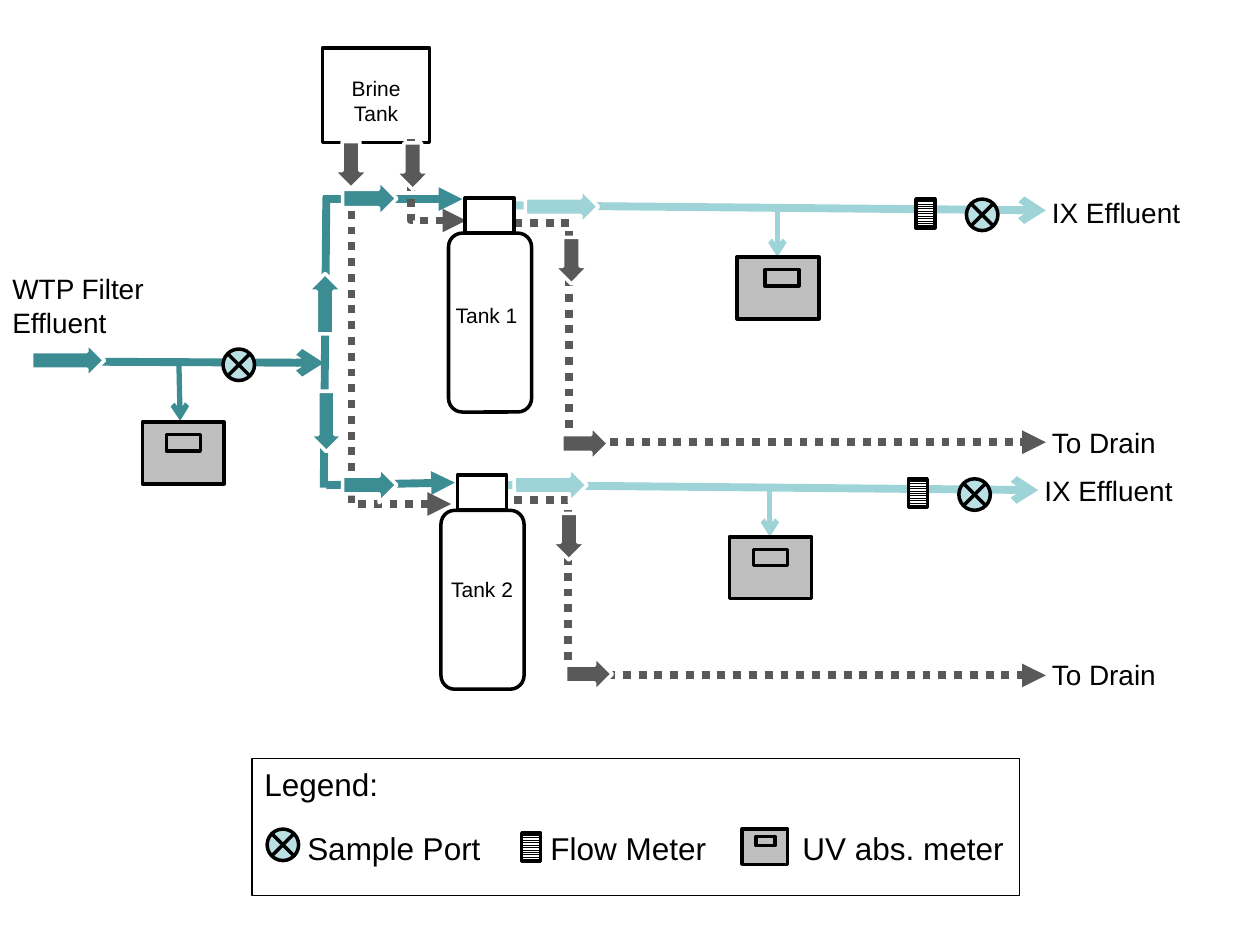
from dataclasses import dataclass
from typing import Optional

from lxml.etree import SubElement
from pptx import Presentation
from pptx.dml.color import RGBColor
from pptx.enum.dml import MSO_LINE, MSO_PATTERN
from pptx.enum.shapes import MSO_CONNECTOR as Link, MSO_SHAPE as Form
from pptx.enum.text import MSO_ANCHOR as Anchor, PP_ALIGN as Align
from pptx.oxml.ns import qn
from pptx.util import Inches, Pt

BLACK = RGBColor(0x00, 0x00, 0x00)
WHITE = RGBColor(0xFF, 0xFF, 0xFF)
TEAL = RGBColor(0x3C, 0x8C, 0x93)
PALE = RGBColor(0x9E, 0xD3, 0xD7)
MINT = RGBColor(0xBB, 0xE0, 0xE3)
DARK = RGBColor(0x59, 0x59, 0x59)
GRAY = RGBColor(0xBF, 0xBF, 0xBF)


@dataclass
class Pipe:
    start: tuple
    end: tuple
    color: RGBColor
    tip: Optional[str] = None
    width: float = 4.5


@dataclass
class Bend:
    box: tuple  # left, top, width, height
    turn: Optional[float] = None  # share of the width; None is a single corner


@dataclass
class Block:
    box: tuple
    color: RGBColor
    angle: int = 0


PIPES = [
    Pipe((2.59, 1.56), (2.57, 3.87), TEAL),
    Pipe((2.56, 1.58), (3.67, 1.58), TEAL, "triangle"),
    Pipe((2.59, 3.85), (3.61, 3.83), TEAL, "triangle"),
    Pipe((0.5, 2.87), (2.57, 2.88), TEAL, "arrow"),
    Pipe((1.42, 2.87), (1.43, 3.34), TEAL, "arrow", 3),
    Pipe((4.08, 1.63), (8.3, 1.67), PALE, "arrow"),
    Pipe((6.17, 1.67), (6.17, 2.04), PALE, "arrow", 3),
    Pipe((4.03, 3.85), (8.24, 3.89), PALE, "arrow"),
    Pipe((6.11, 3.88), (6.11, 4.26), PALE, "arrow", 3),
]
BENDS = [
    Bend((4.08, 1.77, 4.22, 1.74), 0.104),
    Bend((4.08, 3.97, 4.22, 1.39), 0.101),
    Bend((3.26, 1.1, 0.44, 0.65)),
    Bend((2.79, 1.21, 0.79, 2.79)),
]
BLOCKS = [
    Block((2.34, 2.27, 0.48, 0.28), TEAL, 270),
    Block((2.35, 3.21, 0.48, 0.27), TEAL, 90),
    Block((2.72, 1.43, 0.43, 0.29), TEAL),
    Block((2.72, 3.71, 0.43, 0.28), TEAL),
    Block((2.6, 1.17, 0.37, 0.28), DARK, 90),
    Block((3.09, 1.18, 0.37, 0.28), DARK, 90),
    Block((4.33, 4.12, 0.37, 0.28), DARK, 90),
    Block((4.35, 1.93, 0.37, 0.28), DARK, 90),
    Block((4.49, 5.21, 0.37, 0.28), DARK),
    Block((4.46, 3.38, 0.37, 0.28), DARK),
    Block((4.08, 3.71, 0.58, 0.28), PALE),
    Block((4.17, 1.5, 0.58, 0.28), PALE),
    Block((0.25, 2.72, 0.58, 0.28), TEAL),
]
LABELS = [
    ((0, 2.11, 1.32, 0.64), ["WTP Filter", "Effluent"]),
    ((8.25, 3.33, 1.03, 0.37), ["To Drain"]),
    ((8.25, 5.17, 1.03, 0.37), ["To Drain"]),
    ((8.25, 1.5, 1.31, 0.37), ["IX Effluent"]),
    ((8.19, 3.71, 1.31, 0.37), ["IX Effluent"]),
]


def style(item, form: dict) -> None:
    for name, value in form.items():
        setattr(item, name, value)


def write(frame, lines: list, size: int, align=Align.LEFT) -> None:
    style(frame, {"word_wrap": True, "vertical_anchor": Anchor.TOP})
    for i, line in enumerate(lines):
        para = frame.paragraphs[0] if i == 0 else frame.add_paragraph()
        para.alignment = align
        run = para.add_run()
        run.text = line
        style(run.font, {"name": "Arial", "size": Pt(size)})
        run.font.color.rgb = BLACK


def label(shapes, box: tuple, lines: list, size: int = 16, align=Align.LEFT) -> None:
    write(shapes.add_textbox(*map(Inches, box)).text_frame, lines, size, align)


def draw(shapes, form, box: tuple, fill=None, edge=BLACK, width: float = 2):
    shape = shapes.add_shape(form, *map(Inches, box))
    shape.shadow.inherit = False
    if fill is None:
        shape.fill.background()
    else:
        shape.fill.solid()
        shape.fill.fore_color.rgb = fill
    shape.line.color.rgb = edge
    shape.line.width = Pt(width)
    return shape


def link(shapes, kind, start: tuple, end: tuple, color, width, dash=None, head=None, tail=None):
    line = shapes.add_connector(kind, *map(Inches, start + end))
    line.line.color.rgb = color
    line.line.width = Pt(width)
    if dash:
        line.line.dash_style = dash
    for tag, tip in (("a:headEnd", head), ("a:tailEnd", tail)):
        if tip:
            SubElement(line.line._get_or_add_ln(), qn(tag), type=tip)
    SubElement(line._element.spPr, qn("a:effectLst"))
    return line


def bend(shapes, item: Bend) -> None:
    left, top, wide, high = item.box
    single = item.turn is None
    ends = {"head" if single else "tail": "triangle"}
    line = link(shapes, Link.ELBOW, (left, top), (left + wide, top + high),
                DARK, 4.5, MSO_LINE.ROUND_DOT, **ends)
    props = line._element.spPr
    geom = props.find(qn("a:prstGeom"))
    if single:
        geom.set("prst", "bentConnector2")
        props.find(qn("a:xfrm")).set("rot", "10800000")
    else:
        SubElement(geom.find(qn("a:avLst")), qn("a:gd"), name="adj1",
                   fmla=f"val {round(item.turn * 100000)}")


def tank(shapes, left: float, top: float, name: str, spot: tuple) -> None:
    group = shapes.add_group_shape().shapes
    draw(group, Form.RECTANGLE, (left + 0.13, top, 0.39, 0.28))
    draw(group, Form.ROUNDED_RECTANGLE, (left, top + 0.28, 0.66, 1.42))
    label(group, spot, [name], 12, Align.CENTER)


def meter(shapes, box: tuple, screen: tuple) -> None:
    group = shapes.add_group_shape().shapes
    for part in (box, screen):
        draw(group, Form.RECTANGLE, part, GRAY)


def port(shapes, left: float, top: float) -> None:
    draw(shapes, Form.FLOWCHART_SUMMING_JUNCTION, (left, top, 0.25, 0.25), MINT)


def gauge(shapes, left: float, top: float) -> None:
    fill = draw(shapes, Form.RECTANGLE, (left, top, 0.15, 0.23)).fill
    fill.patterned()
    fill.pattern = MSO_PATTERN.LIGHT_HORIZONTAL
    fill.fore_color.rgb = BLACK
    fill.back_color.rgb = WHITE


def legend(shapes) -> None:
    frame = draw(shapes, Form.RECTANGLE, (2, 6.02, 6.09, 1.09), width=0.75).text_frame
    write(frame, ["Legend:", "\tSample Port\tFlow Meter\tUV abs. meter"], 18)
    row = frame.paragraphs[1]
    row.space_before = Pt(15)
    tabs = SubElement(row._p.get_or_add_pPr(), qn("a:tabLst"))
    for stop in (0.34, 2.27, 4.27):
        SubElement(tabs, qn("a:tab"), pos=str(Inches(stop)), algn="l")
    port(shapes, 2.12, 6.58)
    gauge(shapes, 4.14, 6.61)
    meter(shapes, (5.89, 6.58, 0.36, 0.28), (6, 6.64, 0.15, 0.07))


def main() -> None:
    deck = Presentation()
    style(deck, {"slide_width": Inches(10), "slide_height": Inches(7.5)})
    shapes = deck.slides.add_slide(deck.slide_layouts[6]).shapes

    # Pipes and brine lines
    for pipe in PIPES:
        link(shapes, Link.STRAIGHT, pipe.start, pipe.end, pipe.color, pipe.width, tail=pipe.tip)
    for item in BENDS:
        bend(shapes, item)

    # Tanks
    brine = shapes.add_group_shape().shapes
    draw(brine, Form.RECTANGLE, (2.56, 0.38, 0.85, 0.75))
    label(brine, (2.56, 0.55, 0.85, 0.5), ["Brine", "Tank"], 12, Align.CENTER)
    tank(shapes, 3.56, 1.57, "Tank 1 ", (3.51, 2.35, 0.75, 0.3))
    tank(shapes, 3.5, 3.77, "Tank 2 ", (3.42, 4.53, 0.86, 0.3))

    # Meters and sample ports
    for left, top, inset in ((1.13, 3.35, 0.19), (5.85, 2.04, 0.22), (5.79, 4.26, 0.19)):
        meter(shapes, (left, top, 0.65, 0.49), (left + inset, top + 0.1, 0.27, 0.13))
    for left, top in ((7.67, 1.58), (7.61, 3.8)):
        port(shapes, left, top)
        gauge(shapes, left - 0.4, top)
    port(shapes, 1.77, 2.77)

    # Flow arrows
    for block in BLOCKS:
        draw(shapes, Form.RIGHT_ARROW, block.box, block.color, WHITE).rotation = block.angle

    # Labels and legend
    for box, lines in LABELS:
        label(shapes, box, lines)
    legend(shapes)
    deck.save("out.pptx")


if __name__ == "__main__":
    main()
